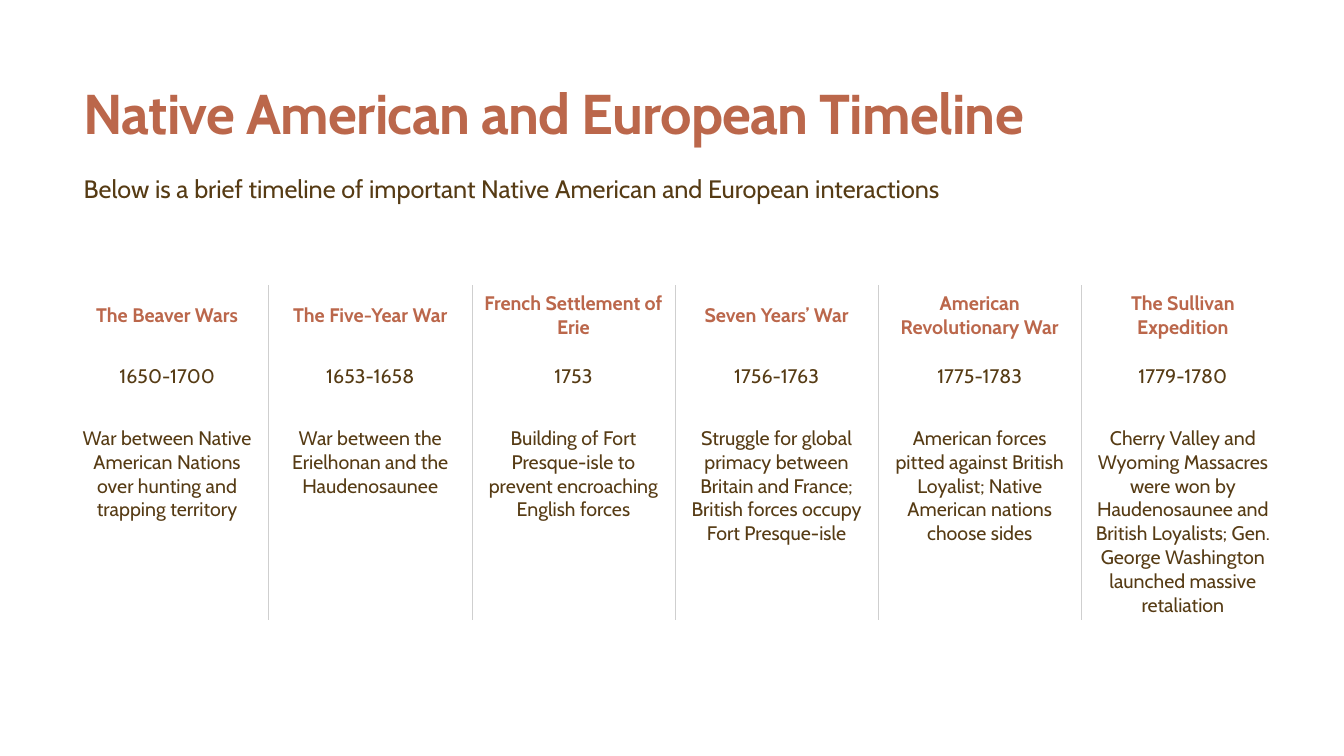
import pptx
import pptx.dml.color
import pptx.enum.text
import pptx.oxml.ns
import pptx.util
from lxml import etree
from pptx.util import Inches

RGBColor = pptx.dml.color.RGBColor
ALIGN = pptx.enum.text.PP_ALIGN
ANCHOR = pptx.enum.text.MSO_ANCHOR

TERRACOTTA = RGBColor(0xBB, 0x67, 0x4B)
BROWN = RGBColor(0x56, 0x3B, 0x14)
RULE_GRAY = RGBColor(0xCF, 0xCF, 0xCF)
FONT = "Cabin"

COLUMN_WIDTH = 2.015
ROW_HEIGHTS = (0.6, 0.6, 1.9)

EVENTS = [
    ("The Beaver Wars", "1650-1700",
     "War between Native American Nations over hunting and trapping territory"),
    ("The Five-Year War", "1653-1658",
     "War between the Erielhonan and the Haudenosaunee"),
    ("French Settlement of Erie", "1753",
     "Building of Fort Presque-isle to prevent encroaching English forces"),
    ("Seven Years’ War", "1756-1763",
     "Struggle for global primacy between Britain and France; "
     "British forces occupy Fort Presque-isle"),
    ("American Revolutionary War", "1775-1783",
     "American forces pitted against British Loyalist; "
     "Native American nations choose sides"),
    ("The Sullivan Expedition", "1779-1780",
     "Cherry Valley and Wyoming Massacres were won by Haudenosaunee and British "
     "Loyalists; Gen. George Washington launched massive retaliation"),
]


def write_text(frame, text, size, color=BROWN, bold=False, align=ALIGN.LEFT,
               line_spacing=1.0, tracking=0):
    """Fill a text frame with one paragraph; tracking is in points."""
    frame.word_wrap = True
    paragraph = frame.paragraphs[0]
    paragraph.alignment = align
    paragraph.line_spacing = line_spacing
    run = paragraph.add_run()
    run.text = text
    run.font.name = FONT
    run.font.size = pptx.util.Pt(size)
    run.font.bold = bold
    run.font.color.rgb = color
    if tracking:
        run._r.get_or_add_rPr().set("spc", str(round(tracking * 100)))


def add_text_box(slide, top, height, text, anchor=ANCHOR.TOP, **text_format):
    box = slide.shapes.add_textbox(Inches(0.83), Inches(top), Inches(11.67), Inches(height))
    frame = box.text_frame
    frame.margin_left = frame.margin_right = frame.margin_top = frame.margin_bottom = 0
    frame.vertical_anchor = anchor
    write_text(frame, text, **text_format)


def set_borders(cell, ruled_sides):
    """Draw thin gray rules on the given sides (letters of LRTB) and clear the others."""
    properties = cell._tc.get_or_add_tcPr()
    qn = pptx.oxml.ns.qn
    for side in "LRTB":
        line = etree.SubElement(properties, qn(f"a:ln{side}"), w=str(pptx.util.Pt(0.5)))
        if side in ruled_sides:
            fill = etree.SubElement(line, qn("a:solidFill"))
            etree.SubElement(fill, qn("a:srgbClr"), val=str(RULE_GRAY))
        else:
            etree.SubElement(line, qn("a:noFill"))


def add_timeline(slide):
    frame = slide.shapes.add_table(
        len(ROW_HEIGHTS), len(EVENTS), Inches(0.65), Inches(2.83),
        Inches(COLUMN_WIDTH * len(EVENTS)), Inches(sum(ROW_HEIGHTS)))
    table = frame.table
    table.first_row = table.horz_banding = False
    for row, height in zip(table.rows, ROW_HEIGHTS):
        row.height = Inches(height)

    last = len(EVENTS) - 1
    for column, event in enumerate(EVENTS):
        table.columns[column].width = Inches(COLUMN_WIDTH)
        ruled_sides = ("L" if column > 0 else "") + ("R" if column < last else "")
        for row, text in enumerate(event):
            cell = table.cell(row, column)
            set_borders(cell, ruled_sides)
            cell.fill.background()
            is_heading, is_description = row == 0, row == 2
            cell.vertical_anchor = ANCHOR.TOP if is_description else ANCHOR.MIDDLE
            if is_description:
                cell.margin_top = Inches(0.2)
            write_text(cell.text_frame, text, size=14, bold=is_heading,
                       color=TERRACOTTA if is_heading else BROWN, align=ALIGN.CENTER)


def main():
    presentation = pptx.Presentation()
    presentation.slide_width = Inches(13.33)
    presentation.slide_height = Inches(7.5)
    slide = presentation.slides.add_slide(presentation.slide_layouts[6])

    add_text_box(slide, 0.78, 0.67, "Native American and European Timeline",
                 anchor=ANCHOR.BOTTOM, size=40, color=TERRACOTTA, bold=True, tracking=-0.5)
    add_text_box(slide, 1.75, 0.83,
                 "Below is a brief timeline of important Native American "
                 "and European interactions",
                 size=18, line_spacing=0.9)
    add_timeline(slide)
    presentation.save("out.pptx")


if __name__ == "__main__":
    main()
